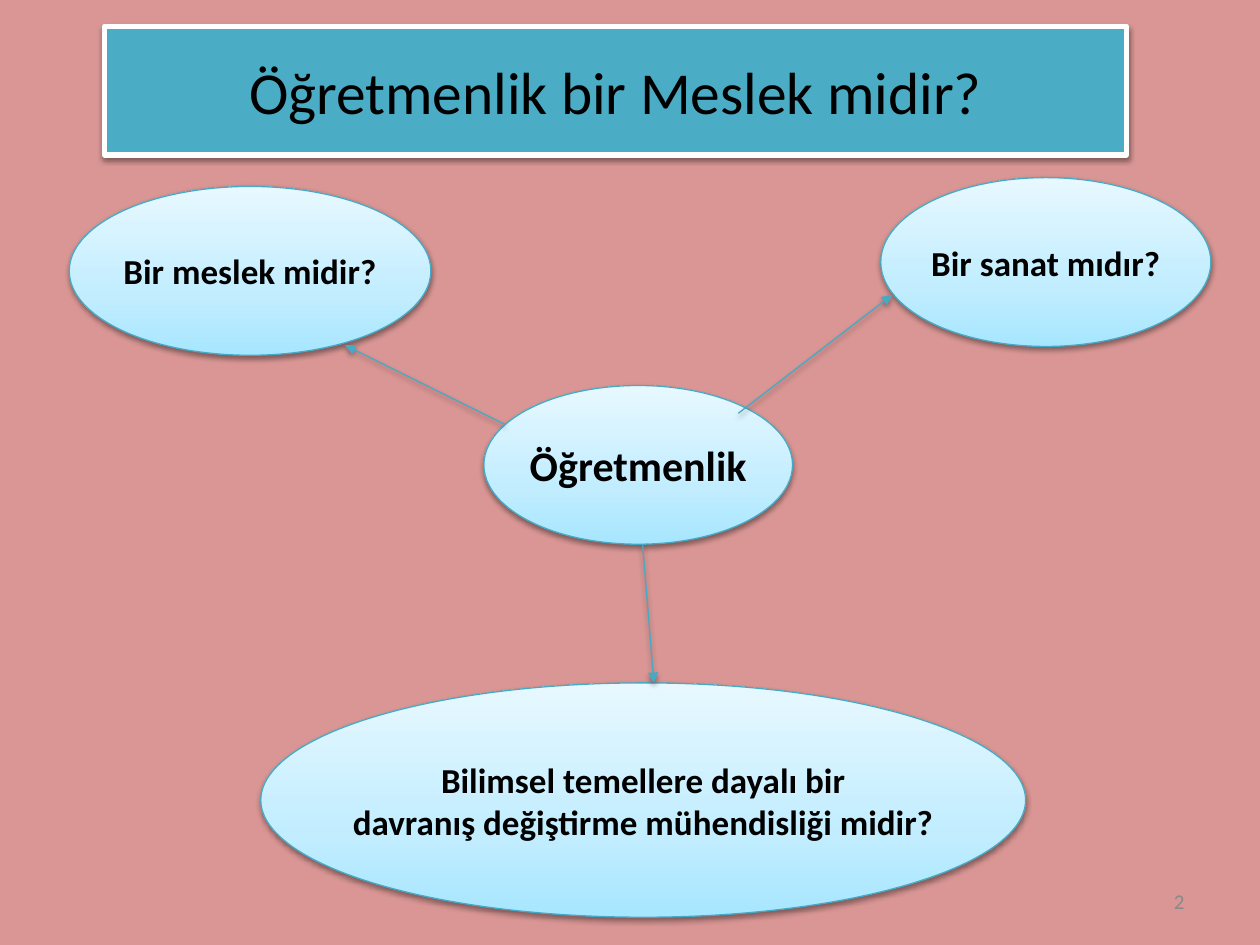
import pptx
import pptx.util
import pptx.dml.color
import pptx.enum.shapes
import pptx.enum.text
import pptx.oxml
import pptx.oxml.ns

COLORS = {
    "background": "D99694",
    "banner": "4BACC6",
    "banner_edge": "FFFFFF",
    "edge": "46AAC5",
    "text": "000000",
    "number": "898989",
    "shadow": "000000",
}
BUBBLE_STOPS = {0: "A7E6FF", 35: "C1EDFF", 100: "E7F8FF"}
FONT = "Calibri"
COLUMNS, ROWS = 100, 75
WIDTH, HEIGHT = pptx.util.Inches(10), pptx.util.Inches(7.5)
NAMESPACE = pptx.oxml.ns.nsdecls("a")

BUBBLES = [
    (["Bir meslek midir?"], 20, (0, 0.7, 28.7, 13.4)),
    (["Öğretmenlik"], 24, (32.9, 16.5, 24.5, 12.6)),
    (["Bir sanat mıdır?"], 20, (64.4, 0, 26.2, 13.4)),
    (
        ["Bilimsel temellere dayalı bir", "davranış değiştirme mühendisliği midir?"],
        20,
        (15.2, 40.1, 60.7, 18.6),
    ),
]
ARROWS = [
    ((53.1, 18.7), (65.3, 9.3)),
    ((34.6, 19.6), (21.9, 13.3)),
    ((45.5, 29.1), (46.4, 40.1)),
]


def rgb(name):
    return pptx.dml.color.RGBColor.from_string(COLORS[name])


def place(column, row):
    return int(WIDTH * column / COLUMNS), int(HEIGHT * row / ROWS)


def place_box(left, top, width, height):
    return place(left, top) + place(width, height)


def set_edge(shape, color, points):
    shape.line.color.rgb = rgb(color)
    shape.line.width = pptx.util.Pt(points)


def add_shadow(shape):
    shape._element.spPr.append(pptx.oxml.parse_xml(
        f'<a:effectLst {NAMESPACE}><a:outerShdw blurRad="40000" dist="20000" '
        f'dir="5400000" rotWithShape="0"><a:srgbClr val="{COLORS["shadow"]}">'
        '<a:alpha val="38000"/></a:srgbClr></a:outerShdw></a:effectLst>'
    ))


def fill_bubble(bubble):
    bubble.fill.gradient()
    bubble.fill.gradient_angle = 90
    gradient = bubble._element.spPr.find(pptx.oxml.ns.qn("a:gradFill"))
    stops = "".join(
        f'<a:gs pos="{share * 1000}"><a:srgbClr val="{color}"/></a:gs>'
        for share, color in BUBBLE_STOPS.items()
    )
    gradient.replace(
        gradient.find(pptx.oxml.ns.qn("a:gsLst")),
        pptx.oxml.parse_xml(f"<a:gsLst {NAMESPACE}>{stops}</a:gsLst>"),
    )


def write(shape, lines, size, color="text", bold=False, align="CENTER", wrap=False):
    frame = shape.text_frame
    frame.word_wrap = wrap
    frame.vertical_anchor = pptx.enum.text.MSO_ANCHOR.MIDDLE
    frame.text = "\n".join(lines)
    for paragraph in frame.paragraphs:
        paragraph.alignment = pptx.enum.text.PP_ALIGN[align]
        paragraph.font.name = FONT
        paragraph.font.size = pptx.util.Pt(size)
        paragraph.font.bold = bold
        paragraph.font.color.rgb = rgb(color)


def add_banner(slide, box):
    title = slide.shapes.title
    title.left, title.top, title.width, title.height = place_box(*box)
    title.fill.solid()
    title.fill.fore_color.rgb = rgb("banner")
    set_edge(title, "banner_edge", 3)
    add_shadow(title)
    write(title, ["Öğretmenlik bir Meslek midir?"], 34, wrap=True)


def add_concept_map(slide, left, top):
    for lines, size, (column, row, width, height) in BUBBLES:
        bubble = slide.shapes.add_shape(
            pptx.enum.shapes.MSO_SHAPE.OVAL,
            *place_box(left + column, top + row, width, height),
        )
        fill_bubble(bubble)
        set_edge(bubble, "edge", 0.75)
        add_shadow(bubble)
        write(bubble, lines, size, bold=True)
    for start, end in ARROWS:
        arrow = slide.shapes.add_connector(
            pptx.enum.shapes.MSO_CONNECTOR.STRAIGHT,
            *place(left + start[0], top + start[1]),
            *place(left + end[0], top + end[1]),
        )
        set_edge(arrow, "edge", 0.75)
        arrow.line._get_or_add_ln().append(
            pptx.oxml.parse_xml(f'<a:tailEnd {NAMESPACE} type="triangle"/>')
        )
        add_shadow(arrow)


def add_page_number(slide, box):
    number = slide.shapes.add_textbox(*place_box(*box))
    write(number, ["2"], 12, color="number", align="RIGHT", wrap=True)


def main():
    deck = pptx.Presentation()
    deck.slide_width, deck.slide_height = WIDTH, HEIGHT
    slide = deck.slides.add_slide(deck.slide_layouts[5])
    slide.background.fill.solid()
    slide.background.fill.fore_color.rgb = rgb("background")
    add_banner(slide, (8.3, 2.1, 81.1, 10.2))
    add_concept_map(slide, 5.5, 14.1)
    add_page_number(slide, (71.7, 69.5, 23.3, 4))
    deck.save("out.pptx")


if __name__ == "__main__":
    main()
